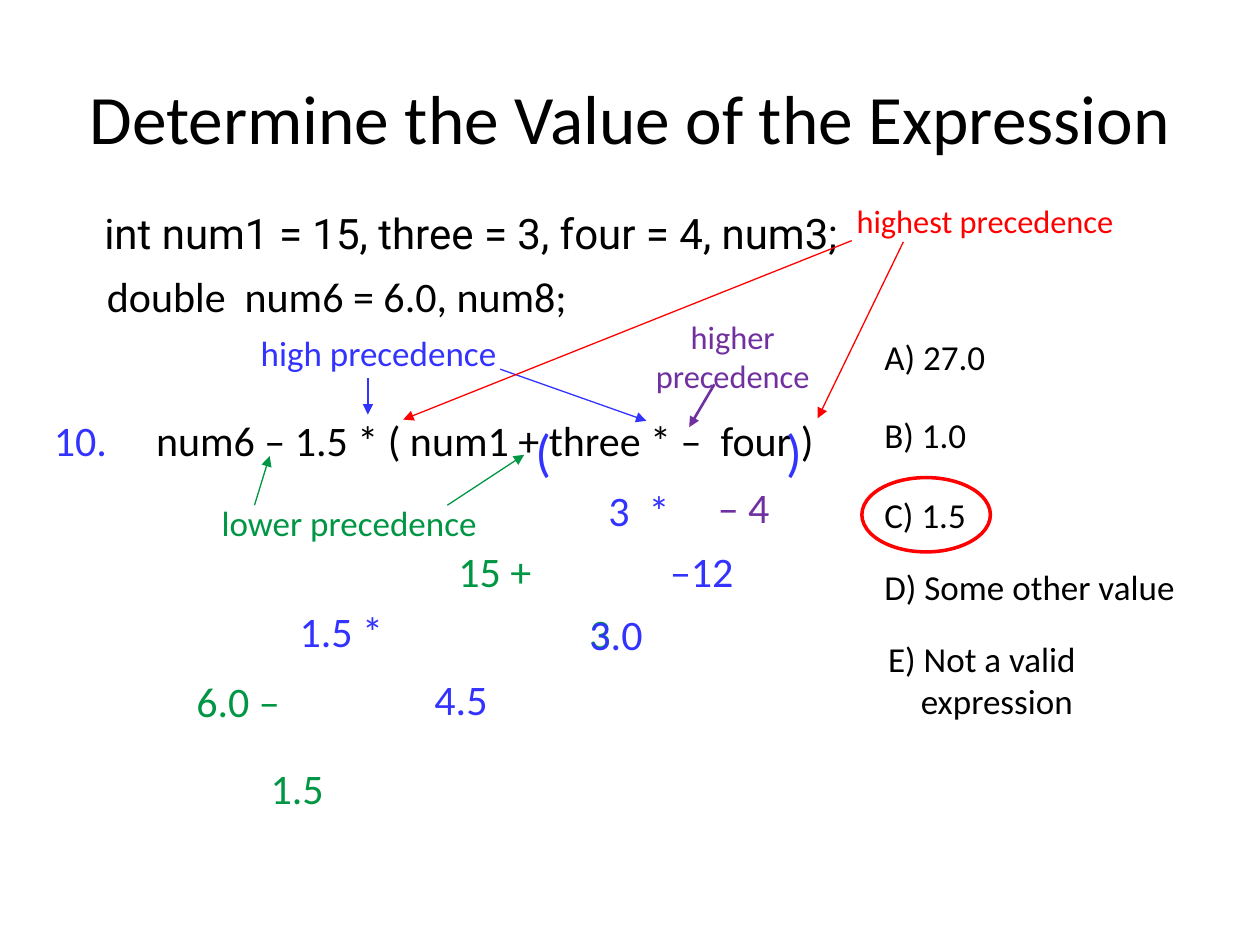
from dataclasses import dataclass

from lxml import etree
from pptx import Presentation
from pptx.dml.color import RGBColor
from pptx.enum.shapes import MSO_CONNECTOR, MSO_SHAPE
from pptx.enum.text import MSO_ANCHOR, PP_ALIGN
from pptx.oxml.ns import qn
from pptx.util import Inches, Pt

STRAIGHT = MSO_CONNECTOR.STRAIGHT
OVAL = MSO_SHAPE.OVAL
MIDDLE = MSO_ANCHOR.MIDDLE
LEFT, CENTER = PP_ALIGN.LEFT, PP_ALIGN.CENTER
TITLE_ONLY = 5
COLS, ROWS = 100, 75
BOX_ROWS = 5.3


@dataclass(frozen=True)
class Theme:
    font: str = "Calibri"
    alt_font: str = "Roboto"
    black: str = "000000"
    blue: str = "3333FF"
    green: str = "009644"
    red: str = "FF0000"
    purple: str = "7030A0"
    title: float = 39.6
    paren: float = 29.6
    body: float = 24
    option: float = 20
    note: float = 18.5
    thin: float = 0.75
    medium: float = 1.5
    thick: float = 2


class Deck:
    def __init__(self, theme):
        self.theme = theme
        self.prs = Presentation()
        self.prs.slide_width = Inches(10)
        self.prs.slide_height = Inches(7.5)
        self.s = self.prs.slides.add_slide(self.prs.slide_layouts[TITLE_ONLY])

    def x(self, cols):
        return round(self.prs.slide_width * cols / COLS)

    def y(self, rows):
        return round(self.prs.slide_height * rows / ROWS)

    def area(self, left, top, width, height):
        return self.x(left), self.y(top), self.x(width), self.y(height)

    def run(self, p, text, size, color, font=None):
        r = p.add_run()
        r.text = text
        r.font.name = font or self.theme.font
        r.font.size = Pt(size)
        r.font.color.rgb = RGBColor.from_string(color)

    def title(self, text, *area):
        sp = self.s.shapes.title
        sp.left, sp.top, sp.width, sp.height = self.area(*area)
        sp.text_frame.vertical_anchor = MIDDLE
        p = sp.text_frame.paragraphs[0]
        p.alignment = CENTER
        self.run(p, text, self.theme.title, self.theme.black)

    def text(self, text, left, top, width, color, size, height=BOX_ROWS,
             align=LEFT, font=None):
        sp = self.s.shapes.add_textbox(*self.area(left, top, width, height))
        sp.text_frame.word_wrap = True
        p = sp.text_frame.paragraphs[0]
        p.alignment = align
        self.run(p, text, size, color, font)
        return p

    def tab(self, p, cols):
        tabs = etree.SubElement(p._p.get_or_add_pPr(), qn("a:tabLst"))
        etree.SubElement(tabs, qn("a:tab"), pos=str(self.x(cols)), algn="l")

    def hang(self, p, cols):
        pPr = p._p.get_or_add_pPr()
        pPr.set("marL", str(self.x(cols)))
        pPr.set("indent", str(-self.x(cols)))

    def arrow(self, x1, y1, x2, y2, color, width):
        line = self.s.shapes.add_connector(
            STRAIGHT, self.x(x1), self.y(y1), self.x(x2), self.y(y2))
        line.line.color.rgb = RGBColor.from_string(color)
        line.line.width = Pt(width)
        etree.SubElement(line.line._get_or_add_ln(), qn("a:tailEnd"), type="triangle")
        etree.SubElement(line._element.spPr, qn("a:effectLst"))

    def ring(self, *area):
        sp = self.s.shapes.add_shape(OVAL, *self.area(*area))
        sp.shadow.inherit = False
        sp.fill.background()
        sp.line.color.rgb = RGBColor.from_string(self.theme.red)
        sp.line.width = Pt(self.theme.thick)


def main():
    t = Theme()
    deck = Deck(t)
    deck.title("Determine the Value of the Expression", 5, 3, 90, 12.5)

    p = deck.text("int num1 = 15, three = 3, four = 4, num3;",
                  7.3, 15.8, 74.4, t.black, t.body, font=t.alt_font)
    p.line_spacing = 1.05
    p.space_after = Pt(8)
    deck.text("double  num6 = 6.0, num8;", 7.5, 21, 73.8, t.black, t.body)

    p = deck.text("10.", 3.3, 32.4, 67.1, t.blue, t.body)
    deck.run(p, "\tnum6 – 1.5 * ( num1 + three * –  four )", t.body, t.black)
    deck.tab(p, 8.1)
    for paren, left in (("(", 41.5), (")", 61.4)):
        deck.text(paren, left, 32.8, 4, t.blue, t.paren)

    options = [("A) 27.0", 26.1), ("B) 1.0", 32.3), ("C) 1.5", 38.7),
               ("D) Some other value", 44.4)]
    for option, top in options:
        deck.text(option, 69.2, top, 28.3, t.black, t.option)
    p = deck.text("E) Not a valid expression", 69.5, 50.1, 20, t.black, t.option,
                  height=9.1)
    deck.hang(p, 2.6)
    deck.ring(68.4, 37.9, 10.2, 5.9)

    steps = [
        ("3  *", 47.3, 38, t.blue),
        ("–", 56, 37.7, t.purple),
        ("4", 58.4, 37.7, t.purple),
        ("15 +", 35.4, 42.8, t.green),
        ("–12", 52.2, 42.8, t.blue),
        ("1.5 *", 22.8, 47.6, t.blue),
        ("3", 45.8, 47.7, t.green),
        ("3.0", 45.8, 47.8, t.blue),
        ("6.0 –", 14.6, 53.1, t.green),
        ("4.5", 33.5, 53, t.blue),
        ("1.5", 20.5, 60, t.green),
    ]
    for step, left, top, color in steps:
        deck.text(step, left, top, 10, color, t.body)

    deck.text("high precedence", 19.7, 25.8, 23.1, t.blue, t.option)
    deck.text("lower precedence", 16.6, 39.3, 23.1, t.green, t.option)
    deck.text("highest precedence", 67, 15.5, 23.1, t.red, t.note)
    deck.text("higher precedence", 50.8, 24.7, 14.7, t.purple, t.note,
              height=6.5, align=CENTER)

    arrows = [
        (29.2, 30, 29.2, 32.9, t.blue, t.thin),
        (39.7, 29.3, 51.3, 33.4, t.blue, t.thin),
        (20.2, 40.1, 21.4, 36.2, t.green, t.thin),
        (35.5, 40.1, 41.6, 36.1, t.green, t.thin),
        (67.6, 19.1, 32, 33.3, t.red, t.thin),
        (71.7, 19.2, 64.9, 33.2, t.red, t.thin),
        (56.7, 30.5, 54.7, 33.9, t.purple, t.medium),
    ]
    for arrow in arrows:
        deck.arrow(*arrow)

    deck.prs.save("out.pptx")


if __name__ == "__main__":
    main()
